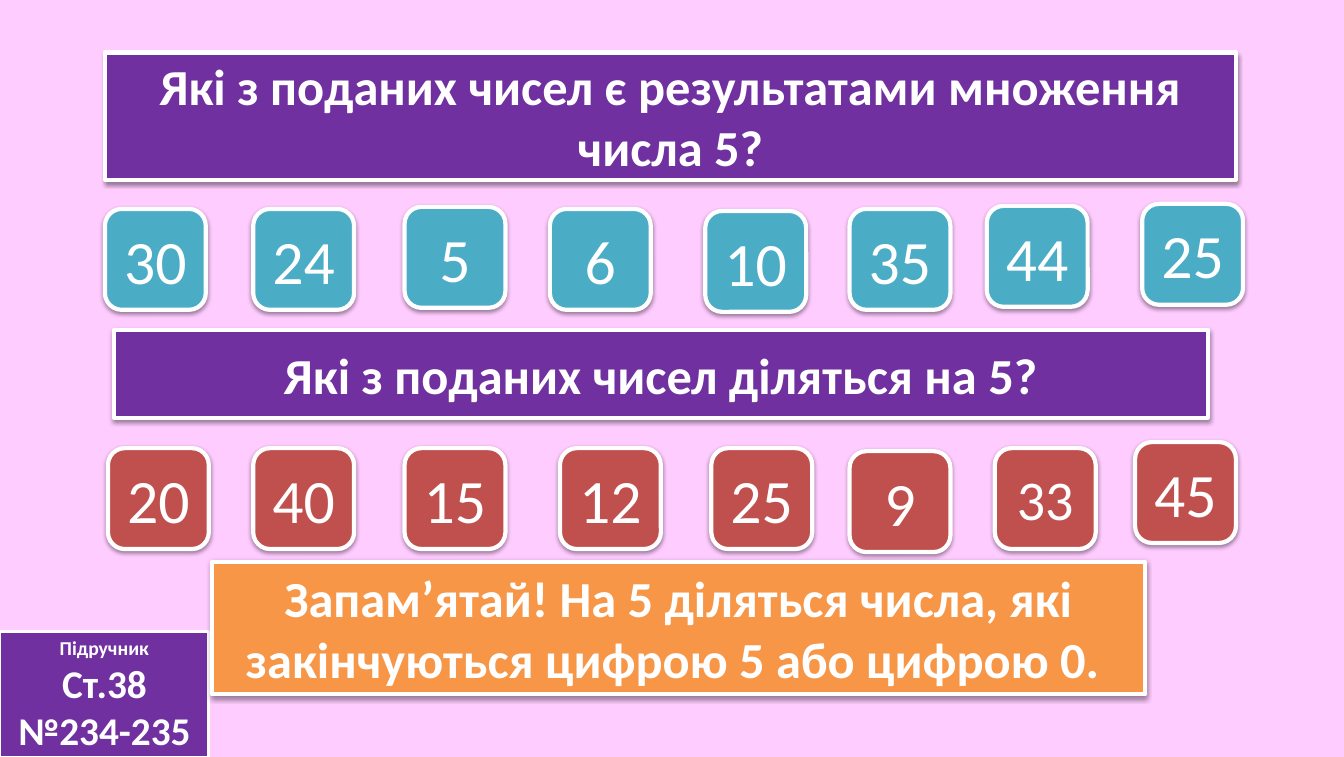
"""Build a slide on multiples of 5 with two questions, number tiles and a rule."""
from dataclasses import dataclass

from lxml.etree import SubElement
from pptx import Presentation
from pptx.dml.color import RGBColor
from pptx.enum.shapes import MSO_SHAPE as Preset
from pptx.enum.text import MSO_ANCHOR as Anchor, MSO_AUTO_SIZE as Fit, PP_ALIGN as Align
from pptx.oxml.ns import qn
from pptx.util import Pt

PX = 9144
TILE = 100
TITLE_ONLY = 5
COLORS = {
    "page": "FFCCFF",
    "white": "FFFFFF",
    "question": "7030A0",
    "product": "4BACC6",
    "quotient": "C0504D",
    "rule": "F79646",
    "shadow": "000000",
}


@dataclass(frozen=True)
class Line:
    text: str
    size: int = 36


@dataclass(frozen=True)
class Panel:
    box: tuple[int, int, int, int]
    color: str
    lines: tuple[Line, ...]
    border: int = 3
    bold: bool = True
    shadow: bool = True
    anchor: Anchor = Anchor.MIDDLE
    fit: Fit = Fit.NONE
    preset: Preset = Preset.RECTANGLE


@dataclass(frozen=True)
class Tile:
    number: int
    left: int
    top: int
    size: int = 44


PRODUCTS_QUESTION = Panel(
    (104, 52, 1121, 126), "question",
    (Line("Які з поданих чисел є результатами множення"), Line("числа 5?")),
)
QUOTIENTS_QUESTION = Panel(
    (113, 327, 1084, 87), "question", (Line("Які з поданих чисел діляться на 5?"),)
)
TEXTBOOK = Panel(
    (0, 626, 207, 124), "question",
    (Line("Підручник", 14), Line("Ст.38 №234-235", 28)),
    border=2, shadow=False,
)
RULE = Panel(
    (210, 557, 925, 131), "rule",
    (Line("Запам’ятай! На 5 діляться числа, які закінчуються цифрою 5 або цифрою 0. "),),
    anchor=Anchor.TOP, fit=Fit.SHAPE_TO_FIT_TEXT,
)
TILES = {
    "product": (
        Tile(30, 104, 207), Tile(24, 251, 207), Tile(5, 401, 205), Tile(6, 545, 207),
        Tile(10, 699, 209), Tile(35, 842, 207), Tile(44, 978, 204), Tile(25, 1132, 202),
    ),
    "quotient": (
        Tile(20, 107, 444), Tile(40, 251, 444), Tile(15, 401, 444), Tile(12, 555, 444),
        Tile(25, 705, 444), Tile(9, 842, 447), Tile(33, 986, 444, 40), Tile(45, 1125, 438),
    ),
}


def rgb(name: str) -> RGBColor:
    return RGBColor.from_string(COLORS[name])


def set_attributes(target, values: dict) -> None:
    for name, value in values.items():
        setattr(target, name, value)


def cast_shadow(shape) -> None:
    effects = shape.element.spPr.find(qn("a:effectLst"))
    outer = SubElement(effects, qn("a:outerShdw"), blurRad="40000", dist="20000",
                       dir="5400000", rotWithShape="0")
    tint = SubElement(outer, qn("a:srgbClr"), val=COLORS["shadow"])
    SubElement(tint, qn("a:alpha"), val="38000")


def write_lines(frame, panel: Panel) -> None:
    set_attributes(frame, {"word_wrap": True, "auto_size": panel.fit,
                           "vertical_anchor": panel.anchor})
    for index, line in enumerate(panel.lines):
        paragraph = frame.add_paragraph() if index else frame.paragraphs[0]
        paragraph.alignment = Align.CENTER
        run = paragraph.add_run()
        run.text = line.text
        set_attributes(run.font, {"name": "Calibri", "size": Pt(line.size),
                                  "bold": panel.bold})
        run.font.color.rgb = rgb("white")


def format_panel(shape, panel: Panel) -> None:
    edges = (edge * PX for edge in panel.box)
    set_attributes(shape, dict(zip(("left", "top", "width", "height"), edges)))
    shape.fill.solid()
    shape.fill.fore_color.rgb = rgb(panel.color)
    shape.line.color.rgb = rgb("white")
    shape.line.width = Pt(panel.border)
    shape.shadow.inherit = False
    if panel.shadow:
        cast_shadow(shape)
    write_lines(shape.text_frame, panel)


def add_panel(slide, panel: Panel) -> None:
    edges = (edge * PX for edge in panel.box)
    format_panel(slide.shapes.add_shape(panel.preset, *edges), panel)


def add_tile(slide, tile: Tile, color: str) -> None:
    add_panel(slide, Panel((tile.left, tile.top, TILE, TILE), color,
                           (Line(str(tile.number), tile.size),),
                           bold=False, preset=Preset.ROUNDED_RECTANGLE))


def main() -> None:
    deck = Presentation()
    set_attributes(deck, {"slide_width": 1332 * PX, "slide_height": 750 * PX})
    slide = deck.slides.add_slide(deck.slide_layouts[TITLE_ONLY])
    slide.background.fill.solid()
    slide.background.fill.fore_color.rgb = rgb("page")
    format_panel(slide.shapes.title, PRODUCTS_QUESTION)
    for color, tiles in TILES.items():
        for tile in tiles:
            add_tile(slide, tile, color)
    for panel in (TEXTBOOK, QUOTIENTS_QUESTION, RULE):
        add_panel(slide, panel)
    deck.save("out.pptx")


if __name__ == "__main__":
    main()
